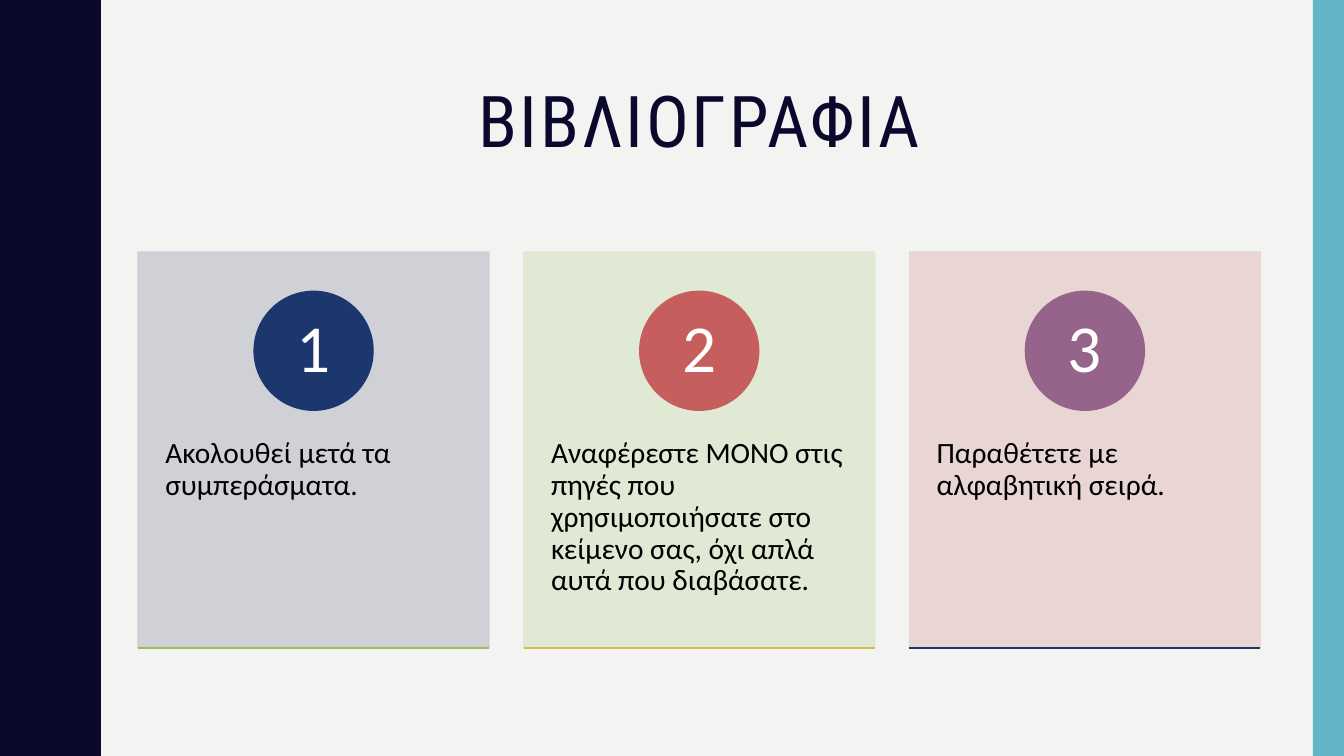
from dataclasses import dataclass

from lxml.etree import SubElement
from pptx import Presentation
from pptx.dml.color import RGBColor
from pptx.enum.shapes import MSO_CONNECTOR as Conn, MSO_SHAPE as Shp
from pptx.enum.text import MSO_ANCHOR as Anchor, MSO_AUTO_SIZE as Auto, PP_ALIGN as Align
from pptx.oxml.ns import qn
from pptx.util import Inches, Pt

WIDTH, HEIGHT = 13.33, 7.5
LEFT, SPAN = 1.37, 11.13
CARD_W, CARD_H, CARD_TOP = 3.48, 3.93, 2.5
BADGE, BADGE_TOP = 1.18, 2.89
BODY_TOP, BODY_H = 3.99, 2.36
NAVY, PAPER, TEAL = "0B082E", "F3F3F2", "62B4C6"

# Trough to crest of one wave; the rest follows by mirroring and repeating
WAVE = [(0.78, 0), (0.78, 0.07), (0.79, 0.14), (0.8, 0.2), (0.81, 0.25),
        (0.83, 0.29), (0.85, 0.33), (0.87, 0.38), (0.89, 0.42), (0.91, 0.46),
        (0.93, 0.5), (0.95, 0.55), (0.96, 0.61), (0.97, 0.68), (0.97, 0.75)]
WAVE_COUNT = 5


@dataclass
class Card:
    text: str
    fill: str
    badge: str
    rule: str


CARDS = [
    Card("Ακολουθεί μετά τα συμπεράσματα.", "CDCED5", "1B376E", "9EBE55"),
    Card("Αναφέρεστε ΜΟΝΟ στις πηγές που χρησιμοποιήσατε στο κείμενο σας, "
         "όχι απλά αυτά που διαβάσατε.", "DFE8D1", "C65E5E", "D3BA55"),
    Card("Παραθέτετε με αλφαβητική σειρά.", "EAD2D2", "96648A", "1B376E"),
]


def rgb(color: str) -> RGBColor:
    return RGBColor.from_string(color)


def set_attrs(target, values: dict) -> None:
    for name, value in values.items():
        setattr(target, name, value)


def paint(sp, color: str, outline: bool = False, alpha: int = 100) -> None:
    sp.shadow.inherit = False
    sp.fill.solid()
    sp.fill.fore_color.rgb = rgb(color)
    if outline:
        sp.line.color.rgb = rgb(color)
        sp.line.width = Pt(1)
    else:
        sp.line.fill.background()
    if alpha < 100:
        for clr in sp._element.spPr.iter(qn("a:srgbClr")):
            SubElement(clr, qn("a:alpha"), val=str(alpha * 1000))


def add_shape(slide, kind, x: float, y: float, w: float, h: float):
    return slide.shapes.add_shape(kind, Inches(x), Inches(y), Inches(w), Inches(h))


def write(sp, text: str, size: float, color: str, font: str = "Calibri",
          align=Align.LEFT, anchor=Anchor.TOP, inset=(0.1, 0.05)):
    """Fill a shape with one paragraph and return its run."""
    tf = sp.text_frame
    dx, dy = map(Inches, inset)
    set_attrs(tf, {"word_wrap": True, "auto_size": Auto.NONE,
                   "vertical_anchor": anchor, "margin_left": dx,
                   "margin_right": dx, "margin_top": dy, "margin_bottom": dy})
    p = tf.paragraphs[0]
    set_attrs(p, {"alignment": align, "line_spacing": 0.9})
    r = p.add_run()
    r.text = text
    set_attrs(r.font, {"name": font, "size": Pt(size)})
    r.font.color.rgb = rgb(color)
    return r


def add_wave(slide) -> None:
    crest = WAVE[-1][1]
    period = WAVE + [(x, 2 * crest - y) for x, y in WAVE[-2:0:-1]]
    edge = [(x, y + i * 2 * crest) for i in range(WAVE_COUNT) for x, y in period]
    builder = slide.shapes.build_freeform(0, 0, scale=Inches(1))
    builder.add_line_segments(edge + [(WAVE[0][0], HEIGHT), (0, HEIGHT)], close=True)
    paint(builder.convert_to_shape(), NAVY)


def add_title(slide, text: str) -> None:
    sp = slide.shapes.title
    set_attrs(sp, {"left": Inches(LEFT), "top": Inches(0.42),
                   "width": Inches(SPAN), "height": Inches(1.63)})
    r = write(sp, text, 51, NAVY, "Roboto Condensed", Align.CENTER, Anchor.MIDDLE)
    r._r.get_or_add_rPr().set("spc", "200")


def add_rule(slide, x: float, y: float, w: float, color: str) -> None:
    line = slide.shapes.add_connector(Conn.STRAIGHT, Inches(x), Inches(y),
                                      Inches(x + w), Inches(y))
    line.line.color.rgb = rgb(color)
    line.line.width = Pt(1)
    SubElement(line._element.spPr, qn("a:effectLst"))


def add_card(slide, card: Card, index: int) -> None:
    x = LEFT + index * (SPAN - CARD_W) / (len(CARDS) - 1)
    panel = add_shape(slide, Shp.RECTANGLE, x, CARD_TOP, CARD_W, CARD_H)
    paint(panel, card.fill, outline=True, alpha=90)

    body = slide.shapes.add_textbox(Inches(x), Inches(BODY_TOP),
                                    Inches(CARD_W), Inches(BODY_H))
    write(body, card.text, 21, "000000", inset=(0.27, 0.36))

    badge = add_shape(slide, Shp.OVAL, x + (CARD_W - BADGE) / 2, BADGE_TOP, BADGE, BADGE)
    paint(badge, card.badge, outline=True)
    write(badge, str(index + 1), 48, "FFFFFF", align=Align.CENTER,
          anchor=Anchor.MIDDLE, inset=(0.09, 0.01))

    add_rule(slide, x, CARD_TOP + CARD_H, CARD_W, card.rule)


def main() -> None:
    prs = Presentation()
    set_attrs(prs, {"slide_width": Inches(WIDTH), "slide_height": Inches(HEIGHT)})
    slide = prs.slides.add_slide(prs.slide_layouts[5])
    bg = slide.background.fill
    bg.solid()
    bg.fore_color.rgb = rgb(PAPER)

    add_wave(slide)
    paint(add_shape(slide, Shp.RECTANGLE, 13.02, 0, WIDTH - 13.02, HEIGHT), TEAL)
    add_title(slide, "ΒΙΒΛΙΟΓΡΑΦΙΑ")
    for i, card in enumerate(CARDS):
        add_card(slide, card, i)
    prs.save("out.pptx")


if __name__ == "__main__":
    main()
